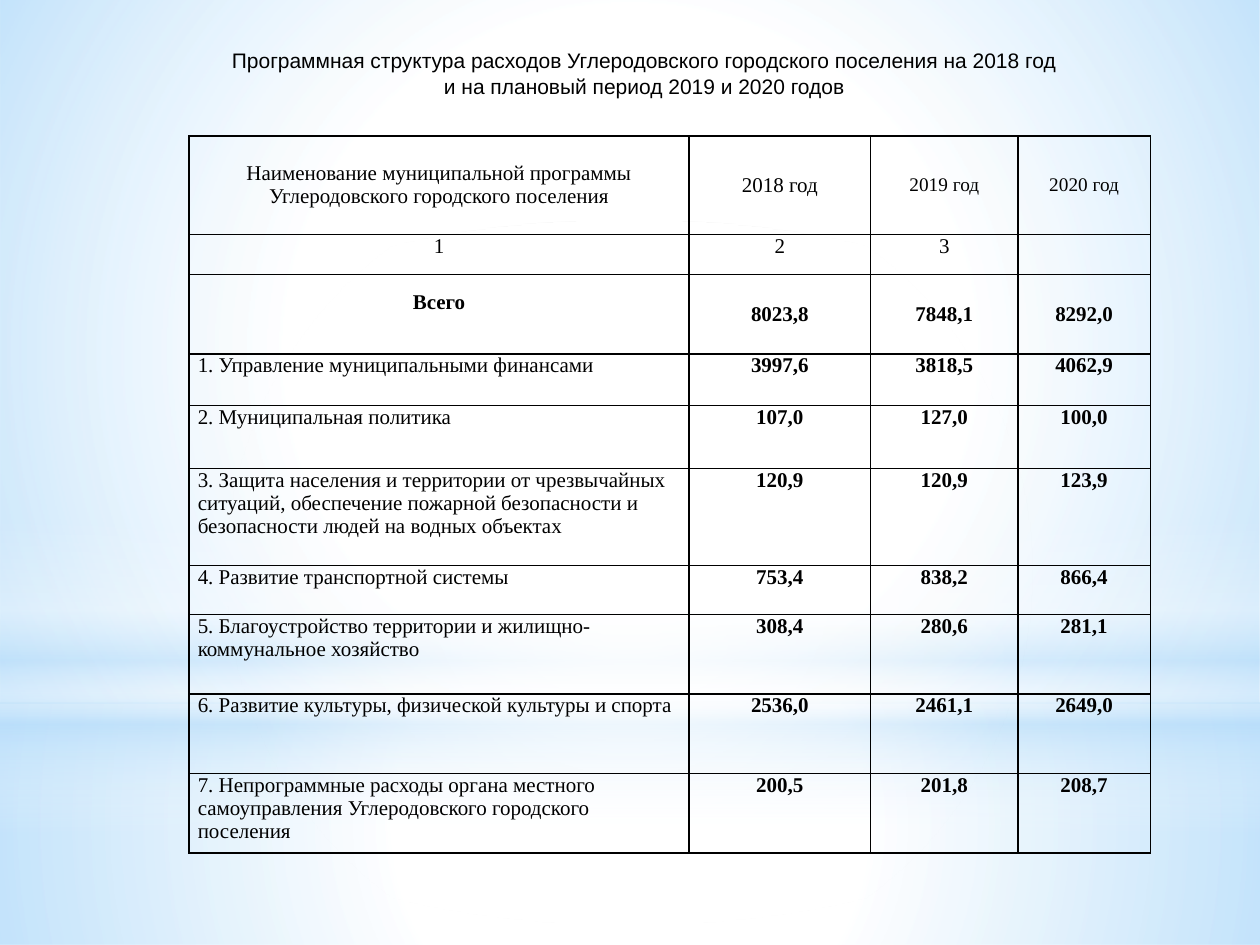
from dataclasses import dataclass

from pptx import Presentation
from pptx.dml.color import RGBColor
from pptx.enum.shapes import MSO_SHAPE
from pptx.enum.text import MSO_ANCHOR, MSO_AUTO_SIZE, PP_ALIGN
from pptx.oxml import parse_xml
from pptx.oxml.ns import nsdecls, qn
from pptx.util import Inches, Pt

RECT, OVAL = MSO_SHAPE.RECTANGLE, MSO_SHAPE.OVAL
TOP, MID = MSO_ANCHOR.TOP, MSO_ANCHOR.MIDDLE
LEFT, MIDST = PP_ALIGN.LEFT, PP_ALIGN.CENTER
FIXED = MSO_AUTO_SIZE.NONE
BLACK = RGBColor(0x00, 0x00, 0x00)
WHITE = RGBColor(0xFF, 0xFF, 0xFF)
BLUE = RGBColor(0xB4, 0xDC, 0xFA)

ROUND = ('<a:path path="circle"><a:fillToRect l="50000" t="50000" '
         'r="50000" b="50000"/></a:path>')
DOWN = '<a:lin ang="5400000" scaled="0"/>'


@dataclass
class Glow:
    kind: int
    top: float
    height: float
    stops: list
    course: str = ROUND


@dataclass
class Row:
    height: float
    texts: tuple
    anchor: int = TOP
    align: int = MIDST
    sizes: tuple = (12, 12, 12, 12)
    bold: tuple = (False, True, True, True)
    lift: float = 0


GLOWS = [
    Glow(RECT, 5.58, 1.92, [(0, WHITE, 91), (37, WHITE, 76), (100, BLUE, 79)]),
    Glow(RECT, 0, 5.58, [(0, WHITE, 89), (48, WHITE, 62), (100, BLUE, 79)]),
    Glow(RECT, 4.12, 2.5, [(0, WHITE, 0), (29, WHITE, 30), (45, BLUE, 40),
                           (55, WHITE, 26), (65, BLUE, 60), (100, WHITE, 0)], DOWN),
    Glow(OVAL, 1.75, 5.58, [(0, WHITE, 100), (56, WHITE, 0)]),
]

TITLE = [
    "Программная структура расходов Углеродовского городского поселения на 2018 год",
    "и на плановый период 2019 и 2020 годов",
]
COLS = (3.97, 1.44, 1.17, 1.05)
PLAIN = (False,) * 4
ROWS = [
    Row(0.78, ("Наименование муниципальной программы Углеродовского городского поселения",
               "2018 год", "2019 год", "2020 год"), MID, sizes=(12, 12, 11, 11), bold=PLAIN),
    Row(0.32, ("1", "2", "3", ""), bold=PLAIN),
    Row(0.63, ("Всего", "8023,8", "7848,1", "8292,0"), MID, bold=(True,) * 4, lift=0.19),
    Row(0.41, ("1. Управление муниципальными финансами",
               "3997,6", "3818,5", "4062,9"), align=LEFT),
    Row(0.5, ("2. Муниципальная политика", "107,0", "127,0", "100,0"), align=LEFT),
    Row(0.77, ("3. Защита населения и территории от чрезвычайных ситуаций, обеспечение "
               "пожарной безопасности и безопасности людей на водных объектах",
               "120,9", "120,9", "123,9"), align=LEFT),
    Row(0.39, ("4. Развитие транспортной системы", "753,4", "838,2", "866,4"), align=LEFT),
    Row(0.63, ("5. Благоустройство территории и жилищно-коммунальное хозяйство",
               "308,4", "280,6", "281,1"), align=LEFT),
    Row(0.63, ("6. Развитие культуры, физической культуры и спорта",
               "2536,0", "2461,1", "2649,0"), align=LEFT),
    Row(0.63, ("7. Непрограммные расходы органа местного самоуправления "
               "Углеродовского городского поселения",
               "200,5", "201,8", "208,7"), align=LEFT),
]


def put(target, values: dict) -> None:
    for name, value in values.items():
        setattr(target, name, value)


def style(para, name: str, size: float, bold: bool, align: int) -> None:
    para.alignment = align
    put(para.font, {"name": name, "size": Pt(size), "bold": bold})
    para.font.color.rgb = BLACK


def draw_glow(slide, glow: Glow) -> None:
    shape = slide.shapes.add_shape(
        glow.kind, 0, Inches(glow.top), Inches(10), Inches(glow.height))
    shape.shadow.inherit = False
    shape.line.fill.background()
    shape.fill.background()
    stops = "".join(
        f'<a:gs pos="{pos * 1000}"><a:srgbClr val="{color}">'
        f'<a:alpha val="{alpha * 1000}"/></a:srgbClr></a:gs>'
        for pos, color, alpha in glow.stops)
    fill = parse_xml(f'<a:gradFill {nsdecls("a")} rotWithShape="1">'
                     f'<a:gsLst>{stops}</a:gsLst>{glow.course}</a:gradFill>')
    props = shape.element.spPr
    props.replace(props.find(qn("a:noFill")), fill)


def frame(cell) -> None:
    props = cell._tc.get_or_add_tcPr()
    for side in ("lnL", "lnR", "lnT", "lnB"):
        props.append(parse_xml(
            f'<a:{side} {nsdecls("a")} w="12700"><a:solidFill>'
            f'<a:srgbClr val="{BLACK}"/></a:solidFill></a:{side}>'))
    cell.fill.background()


def fill_row(table, index: int, row: Row) -> None:
    table.rows[index].height = Inches(row.height)
    for col, text in enumerate(row.texts):
        cell = table.cell(index, col)
        frame(cell)
        put(cell, {
            "text": text, "vertical_anchor": row.anchor,
            "margin_left": Inches(0.07), "margin_right": Inches(0.07),
            "margin_top": 0, "margin_bottom": Inches(0 if col else row.lift),
        })
        style(cell.text_frame.paragraphs[0], "Times New Roman", row.sizes[col],
              row.bold[col], MIDST if col else row.align)


def draw_table(slide) -> None:
    height = sum(row.height for row in ROWS)
    table = slide.shapes.add_table(
        len(ROWS), len(COLS), Inches(1.5), Inches(1.08),
        Inches(sum(COLS)), Inches(height)).table
    put(table, {"first_row": False, "horz_banding": False})
    for col, width in zip(table.columns, COLS):
        col.width = Inches(width)
    for index, row in enumerate(ROWS):
        fill_row(table, index, row)


def draw_title(slide) -> None:
    title = slide.shapes.title
    put(title, {"left": Inches(1.69), "top": Inches(0.33),
                "width": Inches(6.85), "height": Inches(0.5)})
    body = title.text_frame
    put(body, {"text": "\n".join(TITLE), "word_wrap": False,
               "auto_size": FIXED, "vertical_anchor": MID})
    for para in body.paragraphs:
        para.space_before = Pt(0)
        style(para, "Arial", 12, False, MIDST)
    slide.shapes.element.append(title.element)


def main() -> None:
    deck = Presentation()
    put(deck, {"slide_width": Inches(10), "slide_height": Inches(7.5)})
    slide = deck.slides.add_slide(deck.slide_layouts[5])
    back = slide.background.fill
    back.solid()
    back.fore_color.rgb = WHITE
    for glow in GLOWS:
        draw_glow(slide, glow)
    draw_table(slide)
    draw_title(slide)
    deck.save("out.pptx")


if __name__ == "__main__":
    main()
